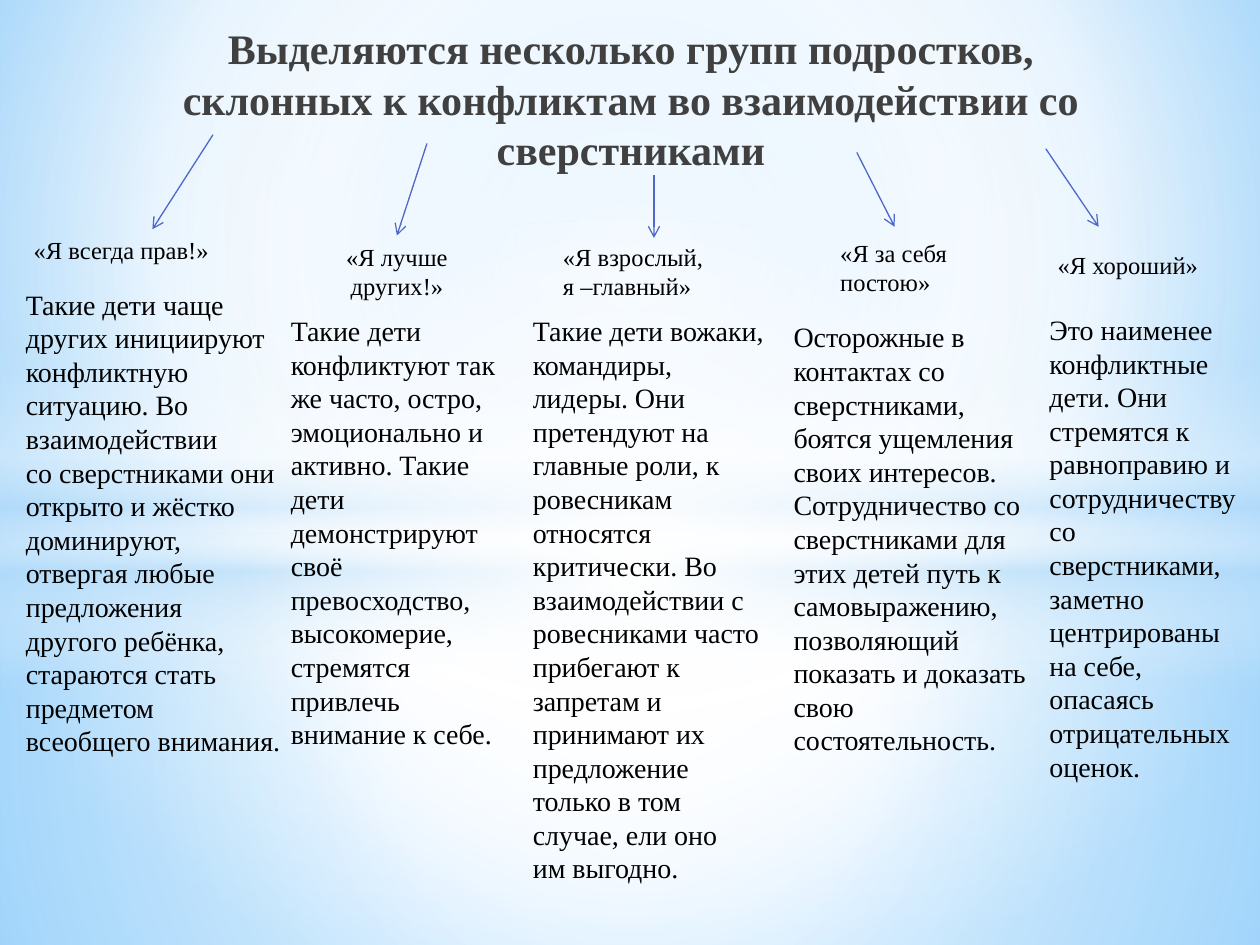
from lxml import etree
from pptx import Presentation
from pptx import util as u
from pptx.dml import color
from pptx.enum import shapes, text
from pptx.oxml import ns

FONT = "Times New Roman"
TITLE = ("Выделяются несколько групп подростков, склонных к конфликтам "
         "во взаимодействии со сверстниками")
CENTRE = (50, 50, 50, 50)

# Gradient stops: position, colour, opacity in percent
BACKGROUND = [(0, "9ED5FF", 100), (60, "FFFFFF", 100), (100, "5BB9FF", 100)]
# Shape kind, (left, top, width, height), stops, focus (None for a vertical blend)
GLOWS = [
    (shapes.MSO_SHAPE.RECTANGLE, (0, 304.5, 720, 235.5),
     [(0, "FFFFFF", 91), (37, "FFFFFF", 76), (100, "B4DCFA", 79)], CENTRE),
    (shapes.MSO_SHAPE.RECTANGLE, (0, 0, 720, 304.5),
     [(0, "FFFFFF", 89), (48, "FFFFFF", 62), (100, "B4DCFA", 79)], CENTRE),
    (shapes.MSO_SHAPE.RECTANGLE, (0, 209, 720, 180),
     [(0, "FFFFFF", 0), (29, "FFFFFF", 30), (45, "B4DCFA", 40),
      (55, "FFFFFF", 26), (65, "B4DCFA", 60), (100, "FFFFFF", 0)], None),
    (shapes.MSO_SHAPE.OVAL, (0, 126, 720, 402),
     [(0, "FFFFFF", 100), (54, "FFFFFF", 0)], CENTRE),
]

# One dict for each group; boxes are (left, top, width, height), arrows (x1, y1, x2, y2)
GROUPS = [
    {"heading": ["«Я всегда прав!»"], "heading_box": (12.2, 131, 115.2, 24.5),
     "options": {"wrap": False},
     "body": ["Такие дети чаще других инициируют конфликтную ситуацию. Во взаимодействии",
              "со сверстниками они открыто и жёстко доминируют, отвергая любые предложения",
              "другого ребёнка, стараются стать предметом всеобщего внимания."],
     "body_box": (7.7, 160.6, 160, 298), "arrow": (121.7, 77, 87.1, 131)},
    {"heading": ["«Я лучше других!»"], "heading_box": (178.6, 134.6, 96.5, 41),
     "options": {"align": text.PP_ALIGN.CENTER},
     "body": ["Такие дети конфликтуют так же часто, остро, эмоционально и активно. "
              "Такие дети демонстрируют своё превосходство, высокомерие, "
              "стремятся привлечь внимание к себе."],
     "body_box": (159.1, 175.7, 134.6, 259), "arrow": (244, 82, 226.8, 134.6)},
    {"heading": ["«Я взрослый,", "я –главный»"], "heading_box": (314.6, 134.6, 102.2, 41),
     "options": {},
     "body": ["Такие дети вожаки, командиры, лидеры. Они претендуют на главные роли, к",
              "ровесникам относятся критически. Во взаимодействии с ровесниками часто",
              "прибегают к запретам и принимают их предложение только в том случае, ели оно",
              "им выгодно."],
     "body_box": (297.4, 175.7, 147.6, 337), "arrow": (373.7, 100, 373.7, 136)},
    {"heading": ["«Я за себя постою»"], "heading_box": (473, 132.5, 75.6, 41),
     "options": {},
     "body": ["Осторожные в контактах со сверстниками, боятся ущемления своих интересов.",
              "Сотрудничество со сверстниками для этих детей путь к самовыражению,",
              "позволяющий показать и доказать свою состоятельность."],
     "body_box": (446.4, 179.3, 158.4, 259), "arrow": (489.6, 87.1, 511.2, 129.6)},
    {"heading": ["«Я хороший»"], "heading_box": (592.6, 139.6, 102.2, 25),
     "options": {"left_margin": 11.7},
     "body": ["Это наименее конфликтные дети. Они стремятся к равноправию и сотрудничеству",
              "со сверстниками, заметно центрированы на себе, опасаясь отрицательных оценок."],
     "body_box": (592.6, 175, 121.7, 279), "arrow": (597.6, 85, 627.8, 129.6)},
]


def rgb(value):
    return color.RGBColor.from_string(value)


def points(values):
    return [u.Pt(value) for value in values]


def add_node(parent, tag, **attributes):
    return etree.SubElement(parent, ns.qn(tag),
                            {name: str(value) for name, value in attributes.items()})


def set_gradient(fill, holder, stops, focus):
    """Swap the solid fill inside holder for a gradient."""
    fill.solid()
    solid = next(holder.iter(ns.qn("a:solidFill")))
    gradient = etree.Element(ns.qn("a:gradFill"), {"rotWithShape": "1"})
    stop_list = add_node(gradient, "a:gsLst")
    for position, value, opacity in stops:
        stop = add_node(stop_list, "a:gs", pos=position * 1000)
        tint = add_node(stop, "a:srgbClr", val=value)
        if opacity < 100:
            add_node(tint, "a:alpha", val=opacity * 1000)
    if focus:
        radial = add_node(gradient, "a:path", path="circle")
        sides = {side: edge * 1000 for side, edge in zip("ltrb", focus)}
        add_node(radial, "a:fillToRect", **sides)
    else:
        add_node(gradient, "a:lin", ang=90 * 60000, scaled=0)
    solid.getparent().replace(solid, gradient)


def add_text(page, area, paragraphs, size, ink="000000", bold=False,
             align=text.PP_ALIGN.LEFT, wrap=True, left_margin=7.2):
    frame = page.shapes.add_textbox(*points(area)).text_frame
    frame.word_wrap = wrap
    frame.margin_left = u.Pt(left_margin)
    for index, words in enumerate(paragraphs):
        para = frame.add_paragraph() if index else frame.paragraphs[0]
        para.text = words
        para.alignment = align
        para.line_spacing = u.Pt(size * 1.2)
        para.font.name = FONT
        para.font.size = u.Pt(size)
        para.font.bold = bold
        para.font.color.rgb = rgb(ink)


def add_arrow(page, ends):
    arrow = page.shapes.add_connector(shapes.MSO_CONNECTOR.STRAIGHT, *points(ends))
    arrow.line.color.rgb = rgb("4E67C8")
    arrow.line.width = u.Pt(0.75)
    add_node(arrow.line._get_or_add_ln(), "a:tailEnd", type="arrow")
    add_node(arrow._element.spPr, "a:effectLst")


def main():
    deck = Presentation()
    deck.slide_width, deck.slide_height = points((720, 540))
    page = deck.slides.add_slide(deck.slide_layouts[6])
    set_gradient(page.background.fill, page._element, BACKGROUND, (20, 10, 20, 60))
    for kind, area, stops, focus in GLOWS:
        glow = page.shapes.add_shape(kind, *points(area))
        glow.shadow.inherit = False
        glow.line.fill.background()
        set_gradient(glow.fill, glow._element.spPr, stops, focus)

    add_text(page, (70.6, 9.4, 565.2, 102.2), [TITLE], 24, "404040", True,
             text.PP_ALIGN.CENTER, left_margin=21.6)
    for group in GROUPS:
        add_text(page, group["heading_box"], group["heading"], 14, **group["options"])
        add_text(page, group["body_box"], group["body"], 16)
        add_arrow(page, group["arrow"])
    deck.save("out.pptx")


if __name__ == "__main__":
    main()
